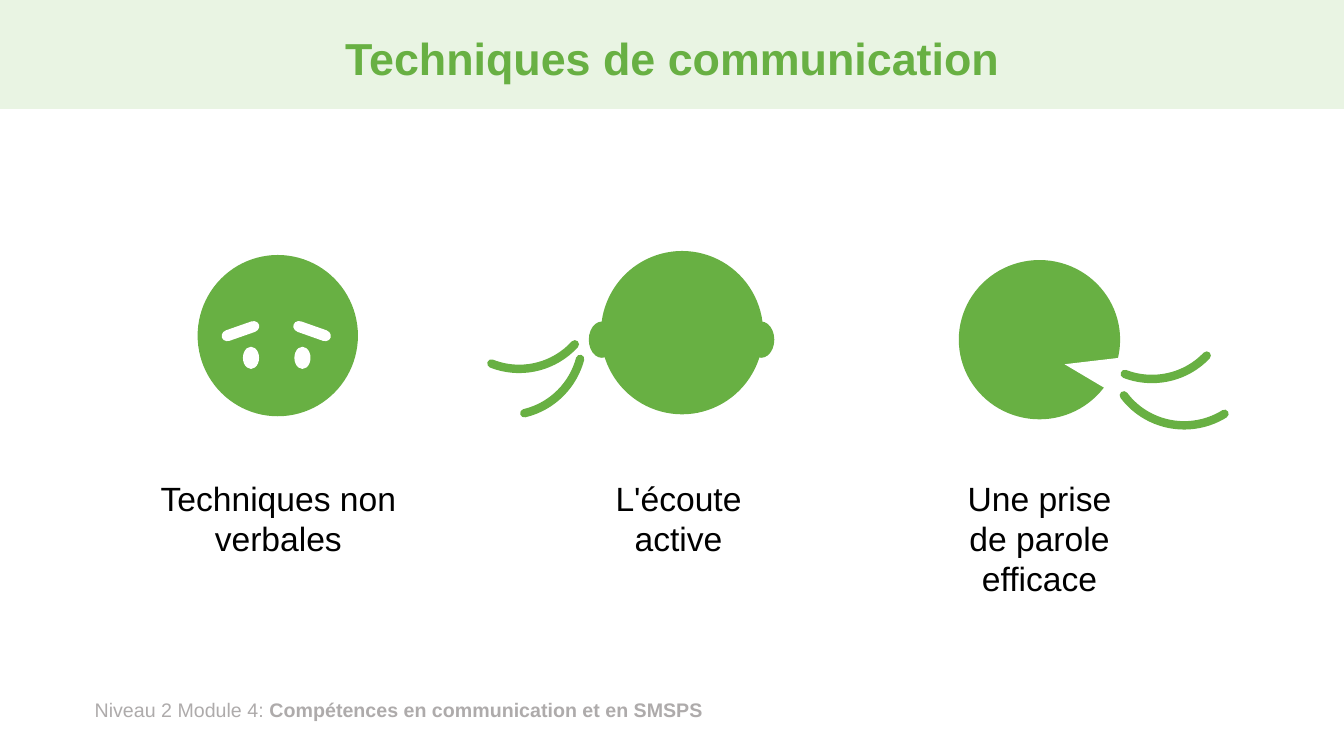
from lxml import etree
from pptx import Presentation
from pptx.dml.color import RGBColor
from pptx.enum.shapes import MSO_SHAPE
from pptx.enum.text import MSO_ANCHOR, MSO_AUTO_SIZE, PP_ALIGN
from pptx.oxml.ns import qn
from pptx.util import Emu, Pt

RECTANGLE = MSO_SHAPE.RECTANGLE
OVAL = MSO_SHAPE.OVAL
PILL = MSO_SHAPE.FLOWCHART_TERMINATOR
TRIANGLE = MSO_SHAPE.ISOSCELES_TRIANGLE
ARC = MSO_SHAPE.ARC
CENTER, LEFT = PP_ALIGN.CENTER, PP_ALIGN.LEFT
TOP, MIDDLE = MSO_ANCHOR.TOP, MSO_ANCHOR.MIDDLE
GROW, FIXED = MSO_AUTO_SIZE.SHAPE_TO_FIT_TEXT, MSO_AUTO_SIZE.NONE

EMU_PER_PX = 9144  # 100 px to the inch
PAGE_WIDTH, PAGE_HEIGHT = 1333, 750
GREEN, PALE_GREEN, WHITE = "68B043", "E9F4E3", "FFFFFF"
BLACK, GREY = "000000", "AEABAB"


def px(*lengths):
    return [Emu(length * EMU_PER_PX) for length in lengths]


def color(value):
    return RGBColor.from_string(value)


class Painter:
    font = "Arial"

    def __init__(self, page):
        self.page = page

    def group(self):
        return self.page.shapes.add_group_shape()

    def solid(self, kind, box, fill=GREEN, rotation=0, parent=None):
        shapes = (parent or self.page).shapes
        shape = shapes.add_shape(kind, *px(*box))
        shape.shadow.inherit = False
        shape.fill.solid()
        shape.fill.fore_color.rgb = color(fill)
        shape.line.fill.background()
        shape.rotation = rotation

    def arc(self, box, start, end):
        """Draw a round-ended arc clockwise between two angles in degrees."""
        shape = self.page.shapes.add_shape(ARC, *px(*box))
        shape.shadow.inherit = False
        shape.fill.background()
        shape.line.color.rgb = color(GREEN)
        shape.line.width = Pt(6)
        shape.line._get_or_add_ln().set("cap", "rnd")
        for index, angle in enumerate((start, end)):
            shape.adjustments[index] = angle * 0.6  # 60000 units per degree
        etree.SubElement(shape.line._get_or_add_ln(), qn("a:round"))

    def text(self, box, *pieces, size=24, ink=BLACK, align=CENTER,
             anchor=TOP, fit=GROW, spacing=1.0):
        """Write one paragraph from (text, bold) pieces."""
        frame = self.page.shapes.add_textbox(*px(*box)).text_frame
        frame.word_wrap = True
        frame.auto_size = fit
        frame.vertical_anchor = anchor
        para = frame.paragraphs[0]
        para.alignment = align
        para.line_spacing = spacing
        for words, bold in pieces:
            span = para.add_run()
            span.text = words
            span.font.name = self.font
            span.font.size = Pt(size)
            span.font.bold = bold
            span.font.color.rgb = color(ink)


def draw_sad_face(painter):
    face = painter.group()
    painter.solid(OVAL, (196, 253, 159, 160), parent=face)
    for eye_left in (241, 292):
        painter.solid(OVAL, (eye_left, 344, 16, 22), WHITE, parent=face)
    for brow_left, tilt in ((219, 340.7), (290, 19.4)):
        painter.solid(PILL, (brow_left, 323, 39, 11), WHITE, tilt, face)


def draw_listening_head(painter):
    painter.solid(OVAL, (596, 249, 161, 162))
    for ear_left in (584, 742):
        painter.solid(OVAL, (ear_left, 319, 26, 36))
    painter.arc((440, 215, 150, 151), 42.81, 111.45)
    painter.arc((428, 261, 150, 151), 15.15, 76.94)


def draw_speaking_head(painter):
    painter.solid(OVAL, (951, 258, 160, 158))
    painter.solid(TRIANGLE, (1067, 332, 50, 74), WHITE, 282)
    painter.arc((1068, 229, 149, 147), 42.81, 111.45)
    painter.arc((1100, 275, 149, 147), 57.23, 143.85)


def main():
    deck = Presentation()
    deck.slide_width, deck.slide_height = px(PAGE_WIDTH, PAGE_HEIGHT)
    painter = Painter(deck.slides.add_slide(deck.slide_layouts[6]))

    painter.solid(RECTANGLE, (0, 0, PAGE_WIDTH, 108), PALE_GREEN)
    painter.text((84, 687, 682, 34), ("Niveau 2 Module 4: ", False),
                 ("Compétences en communication et en SMSPS", True),
                 size=14, ink=GREY, align=LEFT)
    painter.text((92, 13, 1150, 95), ("Techniques de communication", True),
                 size=32, ink=GREEN, anchor=MIDDLE, fit=FIXED, spacing=0.9)

    draw_sad_face(painter)
    draw_listening_head(painter)
    draw_speaking_head(painter)

    captions = (
        (127, 298, "Techniques non verbales"),
        (578, 190, "L'écoute active"),
        (936, 190, "Une prise de parole efficace"),
    )
    for left, width, caption in captions:
        painter.text((left, 469, width, 91), (caption, False))

    deck.save("out.pptx")


if __name__ == "__main__":
    main()
